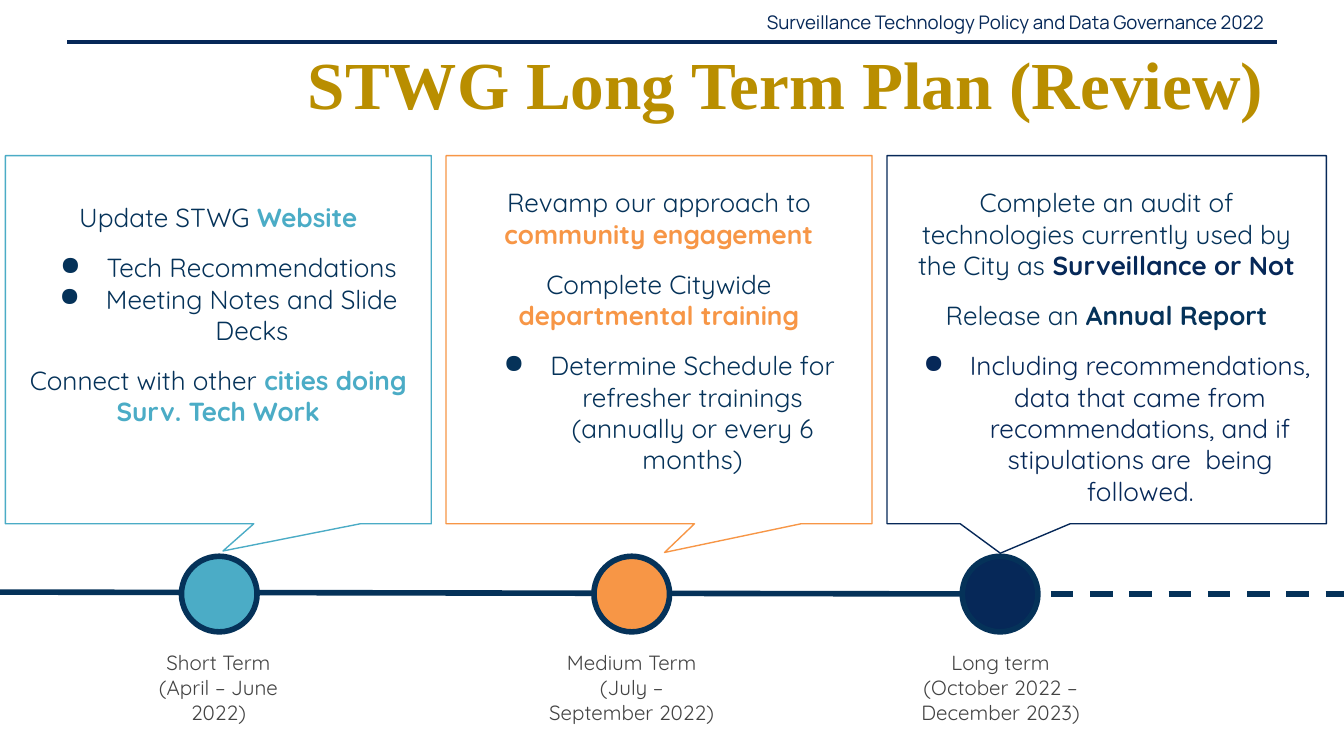
"""Build the long term plan timeline slide."""
import pptx
import pptx.util
import pptx.dml.color
import pptx.enum.dml
import pptx.enum.shapes
import pptx.enum.text
import pptx.oxml.ns
from lxml import etree

Pt = pptx.util.Pt
RGBColor = pptx.dml.color.RGBColor
ALIGN = pptx.enum.text.PP_ALIGN
ANCHOR = pptx.enum.text.MSO_ANCHOR
SHAPE = pptx.enum.shapes.MSO_SHAPE
qn = pptx.oxml.ns.qn

NAVY = RGBColor(0x06, 0x28, 0x58)
INK = RGBColor(0x05, 0x32, 0x59)
TEAL = RGBColor(0x4B, 0xAC, 0xC6)
ORANGE = RGBColor(0xF7, 0x96, 0x46)
GOLD = RGBColor(0xB9, 0x8E, 0x00)
GREY = RGBColor(0x43, 0x43, 0x43)

MILESTONES = [
    dict(
        color=TEAL, bullet_color=INK, box=(2.9, 228.2), pointer=(0.011, 0.574),
        body=(100.8, 163.4), dot=97.2, label_box=(70.6, 92.9),
        label=["Short Term", "(April – June 2022)"],
        plan=[
            dict(runs=[("Update STWG ", INK, False), ("Website", TEAL, True)]),
            dict(runs=[("Tech Recommendations", INK, False)], gap=10, bullet=True),
            dict(runs=[("Meeting Notes and Slide Decks", INK, False)], bullet=True),
            dict(runs=[("Connect with other ", INK, False),
                       ("cities doing Surv. Tech Work", TEAL, True)], gap=10),
        ],
    ),
    dict(
        color=ORANGE, bullet_color=INK, box=(239, 228.2), pointer=(0.013, 0.578),
        body=(92.9, 153.4), dot=318.2, label_box=(285.1, 106.6),
        label=["Medium Term", "(July – September 2022)"],
        plan=[
            dict(runs=[("Revamp our approach to ", INK, False),
                       ("community engagement", ORANGE, True)]),
            dict(runs=[("Complete Citywide ", INK, False),
                       ("departmental training", ORANGE, True)], gap=10),
            dict(runs=[("Determine Schedule for refresher trainings "
                        "(annually or every 6 months)", INK, False)],
                 gap=10, bullet=True),
        ],
    ),
    dict(
        color=NAVY, bullet_color=NAVY, box=(475.2, 235.4), pointer=(-0.242, 0.58),
        body=(92.9, 187.2), dot=515.5, label_box=(474.5, 123.1),
        label=["Long term", "(October 2022 – December 2023)"],
        plan=[
            dict(runs=[("Complete an audit of technologies currently used by "
                        "the City as", INK, False),
                       (" Surveillance or Not", NAVY, True)]),
            dict(runs=[("Release an ", INK, False),
                       ("Annual Report", INK, True)], gap=10),
            dict(runs=[("Including recommendations, data that came from "
                        "recommendations, and if stipulations are  being followed.",
                        NAVY, False)], gap=10, bullet=True),
        ],
    ),
]


def add_bullet(p, color):
    """Give a paragraph a round bullet with a hanging indent."""
    pPr = p._p.get_or_add_pPr()
    pPr.set("marL", str(Pt(36)))
    pPr.set("indent", str(Pt(-25)))
    clr = etree.SubElement(pPr, qn("a:buClr"))
    etree.SubElement(clr, qn("a:srgbClr")).set("val", str(color))
    etree.SubElement(pPr, qn("a:buChar")).set("char", "●")


def add_text(s, paragraphs, left, top, width, height, font="Quicksand", size=14,
             align=ALIGN.CENTER, anchor=ANCHOR.TOP, pad=7.2, bullet_color=INK):
    """Add a text box of paragraphs made of (text, colour, bold) runs."""
    sp = s.shapes.add_textbox(Pt(left), Pt(top), Pt(width), Pt(height))
    tf = sp.text_frame
    tf.word_wrap = True
    tf.vertical_anchor = anchor
    tf.margin_left = tf.margin_right = Pt(7.2)
    tf.margin_top = tf.margin_bottom = Pt(pad)
    for i, item in enumerate(paragraphs):
        p = tf.add_paragraph() if i else tf.paragraphs[0]
        p.alignment = align
        p.space_before = Pt(item.get("gap", 0))
        if item.get("bullet"):
            add_bullet(p, bullet_color)
        for text, color, bold in item["runs"]:
            r = p.add_run()
            r.text = text
            r.font.name = font
            r.font.size = Pt(size)
            r.font.bold = bold
            r.font.color.rgb = color
    return sp


def add_line(s, x1, y1, x2, y2, color, weight, dash=None):
    """Add a straight line without a shadow."""
    sp = s.shapes.add_connector(pptx.enum.shapes.MSO_CONNECTOR.STRAIGHT,
                                Pt(x1), Pt(y1), Pt(x2), Pt(y2))
    sp.line.color.rgb = color
    sp.line.width = Pt(weight)
    if dash:
        sp.line.dash_style = dash
    etree.SubElement(sp._element.spPr, qn("a:effectLst"))
    return sp


def add_outline(s, kind, left, top, width, height, line, weight, fill=None):
    """Add an outlined preset shape, filled only if a fill is given."""
    sp = s.shapes.add_shape(kind, Pt(left), Pt(top), Pt(width), Pt(height))
    sp.shadow.inherit = False
    sp.line.color.rgb = line
    sp.line.width = Pt(weight)
    if fill is None:
        sp.fill.background()
    else:
        sp.fill.solid()
        sp.fill.fore_color.rgb = fill
    return sp


def add_milestone(s, m):
    """Add one milestone: callout, plan, dot and label."""
    left, width = m["box"]
    sp = add_outline(s, SHAPE.RECTANGULAR_CALLOUT, left, 83.4, width, 197.2,
                     m["color"], 0.75)
    for i, value in enumerate(m["pointer"]):
        sp.adjustments[i] = value
    top, height = m["body"]
    add_text(s, m["plan"], left, top, width, height, bullet_color=m["bullet_color"])
    add_outline(s, SHAPE.OVAL, m["dot"], 298, 40.5, 40.5, INK, 3, fill=m["color"])
    left, width = m["label_box"]
    label = [dict(runs=[(text, GREY, False)]) for text in m["label"]]
    add_text(s, label, left, 341.3, width, 54.7, size=11)


def main():
    """Build and save the slide."""
    prs = pptx.Presentation()
    prs.slide_width, prs.slide_height = Pt(720), Pt(405)
    s = prs.slides.add_slide(prs.slide_layouts[6])
    add_line(s, 36, 22.4, 684, 22.4, NAVY, 2.25)
    add_text(s, [dict(runs=[("Surveillance Technology Policy and Data Governance 2022",
                             NAVY, False)])],
             375.1, 0.9, 308.9, 21.6, font="Manrope", size=10,
             align=ALIGN.RIGHT, anchor=ANCHOR.MIDDLE, pad=3.6)
    add_text(s, [dict(runs=[("STWG Long Term Plan (Review)", GOLD, True)])],
             18, 21, 666, 46, font="Times New Roman", size=36,
             align=ALIGN.RIGHT, anchor=ANCHOR.MIDDLE, pad=3.6)
    add_line(s, 563, 318.3, 720.7, 318.3, INK, 3, pptx.enum.dml.MSO_LINE.DASH)
    add_line(s, -0.7, 317.2, 555.8, 318.3, INK, 3)
    for m in MILESTONES:
        add_milestone(s, m)
    prs.save("out.pptx")


if __name__ == "__main__":
    main()
